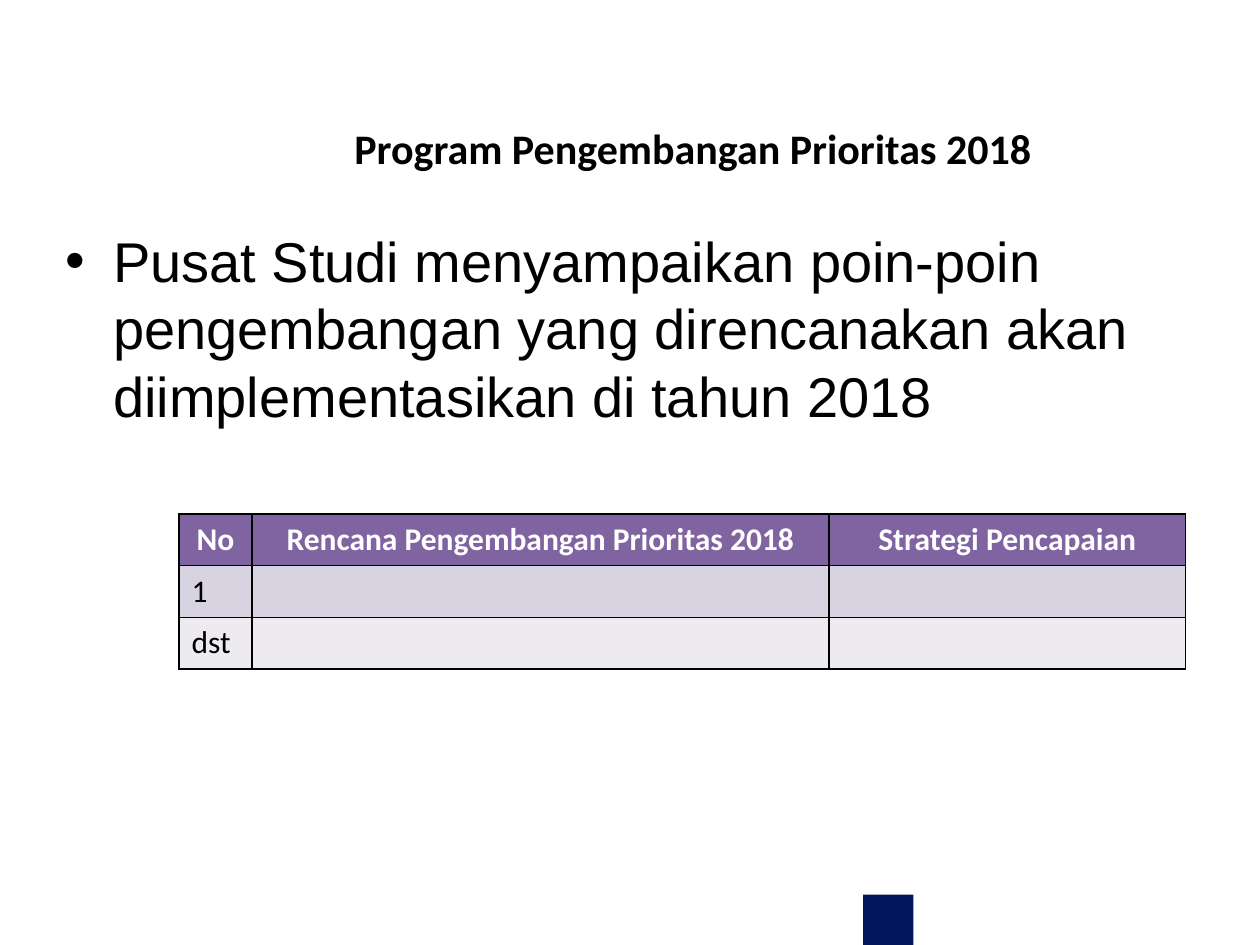
from lxml.etree import SubElement
from pptx import Presentation
from pptx.dml.color import RGBColor
from pptx.enum.shapes import MSO_SHAPE
from pptx.enum.text import PP_ALIGN
from pptx.oxml.ns import qn
from pptx.util import Inches, Pt


def colour(value):
    return RGBColor.from_string(value)


class SlideBuilder:
    black, white, navy = "000000", "FFFFFF", "02165B"
    header_fill = "8064A2"
    band_fills = ("D8D3E0", "EDEAF0")
    title_format = {"name": "Calibri", "size": Pt(24), "bold": True}
    body_format = {"name": "Arial", "size": Pt(32), "bold": False}
    header_format = {"name": "Calibri", "size": Pt(18), "bold": True}
    cell_format = {"name": "Calibri", "size": Pt(18), "bold": False}

    def __init__(self, page):
        self.page = page

    def add_span(self, para, text, format_values, text_colour, align=PP_ALIGN.LEFT):
        para.alignment = align
        span = para.add_run()
        span.text = text
        for name, value in format_values.items():
            setattr(span.font, name, value)
        span.font.color.rgb = colour(text_colour)

    def square(self, left, top, side):
        shape = self.page.shapes.add_shape(
            MSO_SHAPE.RECTANGLE, Inches(left), Inches(top), Inches(side), Inches(side))
        shape.shadow.inherit = False
        shape.fill.solid()
        shape.fill.fore_color.rgb = colour(self.navy)
        shape.line.fill.background()

    def text(self, left, top, width, height, text, format_values, align=PP_ALIGN.LEFT):
        box = self.page.shapes.add_textbox(
            Inches(left), Inches(top), Inches(width), Inches(height))
        box.text_frame.word_wrap = True
        para = box.text_frame.paragraphs[0]
        self.add_span(para, text, format_values, self.black, align)
        return para

    def bullet(self, left, top, width, height, text, indent):
        para = self.text(left, top, width, height, text, self.body_format)
        properties = para._p.get_or_add_pPr()
        properties.set("marL", str(Inches(indent)))
        properties.set("indent", str(-Inches(indent)))
        SubElement(properties, qn("a:buFont"), typeface="Arial")
        SubElement(properties, qn("a:buChar"), char="•")

    def cell_style(self, cell, fill):
        properties = cell._tc.get_or_add_tcPr()
        for side in ("lnL", "lnR", "lnT", "lnB"):
            border = SubElement(properties, qn(f"a:{side}"), w=str(Pt(1)))
            line_fill = SubElement(border, qn("a:solidFill"))
            SubElement(line_fill, qn("a:srgbClr"), val=self.black)
        cell.fill.solid()
        cell.fill.fore_color.rgb = colour(fill)

    def table(self, left, top, column_widths, row_height, rows):
        table = self.page.shapes.add_table(
            len(rows), len(column_widths), Inches(left), Inches(top),
            Inches(sum(column_widths)), Inches(row_height * len(rows))).table
        for column, width in zip(table.columns, column_widths):
            column.width = Inches(width)
        for row_index, texts in enumerate(rows):
            if row_index == 0:
                fill, text_style = self.header_fill, (
                    self.header_format, self.white, PP_ALIGN.CENTER)
            else:
                fill = self.band_fills[(row_index - 1) % 2]
                text_style = (self.cell_format, self.black)
            for column_index, text in enumerate(texts):
                cell = table.cell(row_index, column_index)
                self.cell_style(cell, fill)
                if text:
                    self.add_span(cell.text_frame.paragraphs[0], text, *text_style)


def main():
    deck = Presentation()
    deck.slide_width, deck.slide_height = Inches(10), Inches(7.5)
    builder = SlideBuilder(deck.slides.add_slide(deck.slide_layouts[6]))
    builder.square(6.85, 7.1, 0.4)
    builder.text(2.25, 0.92, 6.5, 0.5, "Program Pengembangan Prioritas 2018",
                 builder.title_format, PP_ALIGN.CENTER)
    builder.bullet(0.42, 1.75, 9, 4.53,
                   "Pusat Studi menyampaikan poin-poin pengembangan yang "
                   "direncanakan akan diimplementasikan di tahun 2018", 0.38)
    builder.table(1.42, 4.08, (0.58, 4.58, 2.83), 0.41, (
        ("No", "Rencana Pengembangan Prioritas 2018", "Strategi Pencapaian"),
        ("1", "", ""),
        ("dst", "", "")))
    deck.save("out.pptx")


if __name__ == "__main__":
    main()
